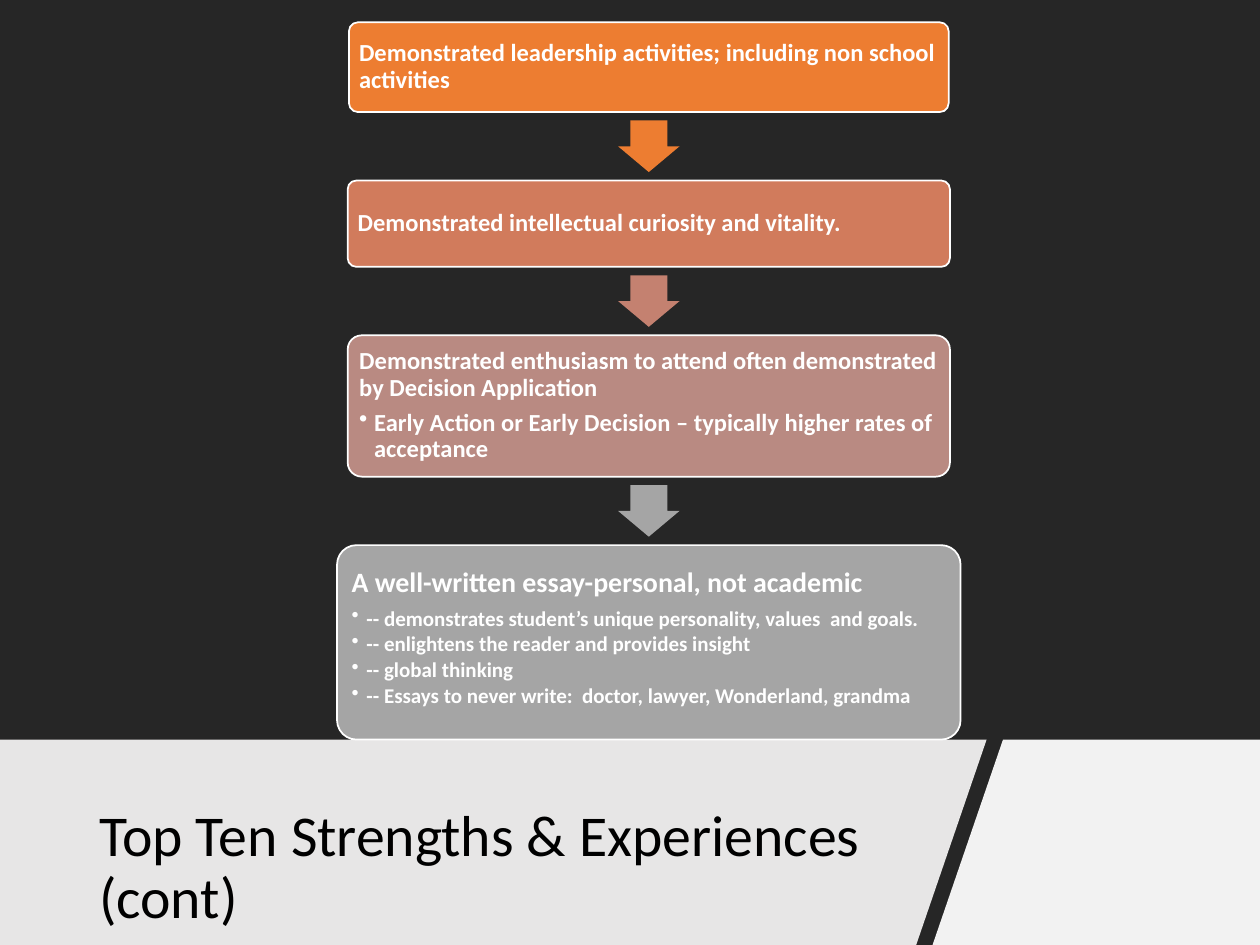
"""Build the slide of admission strengths as a downward flow of four steps."""
from dataclasses import dataclass

import lxml.etree
import pptx
import pptx.dml.color
import pptx.enum.shapes
import pptx.enum.text
import pptx.oxml.ns
import pptx.util
from pptx.util import Cm


@dataclass(frozen=True)
class Theme:
    font: str = "Calibri"
    backdrop: str = "262626"
    banner: str = "E7E6E6"
    corner: str = "F2F2F2"
    title: str = "000000"
    light: str = "FFFFFF"
    steps: tuple = ("ED7D31", "D17B5C", "B98A82", "A5A5A5")
    arrows: tuple = ("ED7D31", "C48170", "A5A5A5")
    title_size: int = 33
    step_size: int = 14
    essay_size: int = 16
    essay_point_size: int = 12


def paint(target, color):
    target.fill.solid()
    target.fill.fore_color.rgb = pptx.dml.color.RGBColor.from_string(color)


def style(paragraph, size, color, bold, space_after):
    paragraph.alignment = pptx.enum.text.PP_ALIGN.LEFT
    paragraph.line_spacing = 0.9
    paragraph.space_after = pptx.util.Pt(space_after)
    for run in paragraph.runs:
        run.font.name = theme.font
        run.font.size = pptx.util.Pt(size)
        run.font.bold = bold
        run.font.color.rgb = pptx.dml.color.RGBColor.from_string(color)


theme = Theme()
presentation = pptx.Presentation()
presentation.slide_width = Cm(25.4)
presentation.slide_height = Cm(19.05)
slide = presentation.slides.add_slide(presentation.slide_layouts[6])
paint(slide.background, theme.backdrop)

BANNER_TOP, SLIDE_BOTTOM = 14.91, 19.05
panels = [
    (theme.corner, [(20.22, BANNER_TOP), (25.4, BANNER_TOP), (25.4, SLIDE_BOTTOM), (18.8, SLIDE_BOTTOM)]),
    (theme.banner, [(0, BANNER_TOP), (19.89, BANNER_TOP), (18.47, SLIDE_BOTTOM), (0, SLIDE_BOTTOM)]),
]
for color, corners in panels:
    points = [(Cm(x), Cm(y)) for x, y in corners]
    outline = slide.shapes.build_freeform(*points[0])
    outline.add_line_segments(points[1:], close=True)
    panel = outline.convert_to_shape()
    panel.shadow.inherit = False
    paint(panel, color)
    panel.line.fill.background()

title = slide.shapes.add_textbox(Cm(1.75), Cm(16.61), Cm(18.77), Cm(1.8))
title.text_frame.word_wrap = True
title.text_frame.vertical_anchor = pptx.enum.text.MSO_ANCHOR.MIDDLE
title.text_frame.text = "Top Ten Strengths & Experiences (cont)"
style(title.text_frame.paragraphs[0], theme.title_size, theme.title, False, 0)

FLOW_CENTER, FLOW_TOP, STEP_GAP = 13.08, 0.45, 1.38
ARROW_WIDTH, ARROW_HEIGHT = 1.24, 1.04
steps = [
    (12.09, 1.81, 0.15, 0.15, theme.step_size, theme.step_size,
     "Demonstrated leadership activities; including non school activities", []),
    (12.14, 1.74, 0.15, 0.15, theme.step_size, theme.step_size,
     "Demonstrated intellectual curiosity and vitality.", []),
    (12.14, 2.85, 0.15, 0.15, theme.step_size, theme.step_size,
     "Demonstrated enthusiasm to attend often demonstrated by Decision Application",
     ["Early Action or Early Decision – typically higher rates of acceptance"]),
    (12.57, 3.92, 0.18, 0.36, theme.essay_size, theme.essay_point_size,
     "A well-written essay-personal, not academic",
     ["-- demonstrates student’s unique personality, values  and goals.",
      "-- enlightens the reader and provides insight",
      "-- global thinking",
      "-- Essays to never write:  doctor, lawyer, Wonderland, grandma"]),
]

top = FLOW_TOP
for index, (width, height, inset, bottom_inset, size, point_size, heading, points) in enumerate(steps):
    step = slide.shapes.add_shape(
        pptx.enum.shapes.MSO_SHAPE.ROUNDED_RECTANGLE,
        Cm(FLOW_CENTER - width / 2), Cm(top), Cm(width), Cm(height))
    step.adjustments[0] = 0.1
    step.shadow.inherit = False
    paint(step, theme.steps[index])
    step.line.color.rgb = pptx.dml.color.RGBColor.from_string(theme.light)
    step.line.width = pptx.util.Pt(1)

    frame = step.text_frame
    frame.word_wrap = True
    frame.vertical_anchor = pptx.enum.text.MSO_ANCHOR.MIDDLE
    frame.margin_left = frame.margin_right = frame.margin_top = Cm(inset)
    frame.margin_bottom = Cm(bottom_inset)
    frame.text = heading
    style(frame.paragraphs[0], size, theme.light, True, 0.35 * size)
    for point in points:
        bullet = frame.add_paragraph()
        bullet.text = point
        bullet.level = 1
        style(bullet, point_size, theme.light, True, 0.15 * point_size)
        properties = bullet._p.get_or_add_pPr()
        properties.set("marL", str(Cm(0.3)))
        properties.set("indent", str(-Cm(0.3)))
        lxml.etree.SubElement(properties, pptx.oxml.ns.qn("a:buChar")).set("char", "•")

    top += height + STEP_GAP
    if index < len(theme.arrows):
        arrow = slide.shapes.add_shape(
            pptx.enum.shapes.MSO_SHAPE.DOWN_ARROW,
            Cm(FLOW_CENTER - ARROW_WIDTH / 2), Cm(top - (STEP_GAP + ARROW_HEIGHT) / 2),
            Cm(ARROW_WIDTH), Cm(ARROW_HEIGHT))
        arrow.adjustments[0] = 0.6
        arrow.adjustments[1] = 0.5
        arrow.shadow.inherit = False
        paint(arrow, theme.arrows[index])
        arrow.line.fill.background()

presentation.save("out.pptx")
